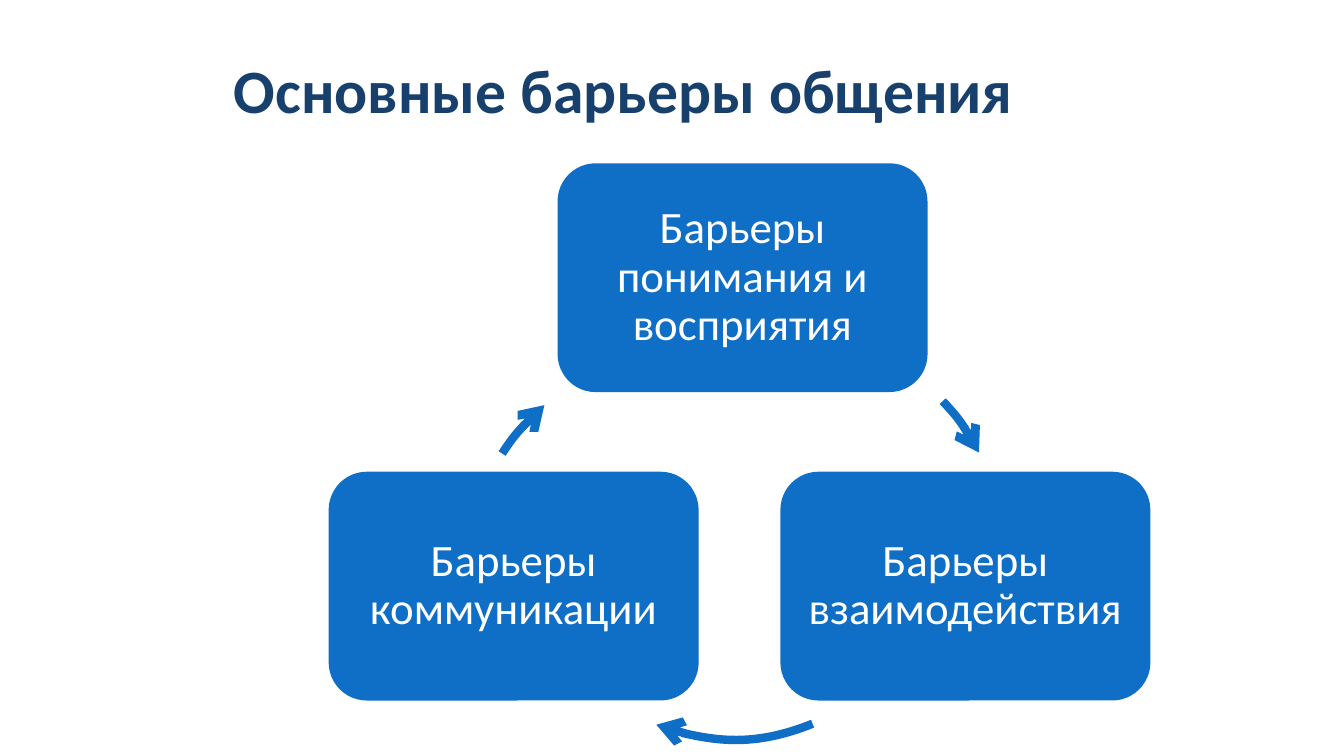
"""Build a slide with a cycle of three communication barriers."""
from dataclasses import dataclass

from lxml.etree import SubElement
from pptx import Presentation
from pptx.dml.color import RGBColor
from pptx.enum.shapes import MSO_SHAPE as Shape
from pptx.enum.text import MSO_ANCHOR as Anchor, PP_ALIGN as Align
from pptx.oxml.ns import qn
from pptx.util import Inches, Pt


@dataclass(frozen=True)
class Theme:
    font: str = "Calibri"
    title_color: RGBColor = RGBColor(0x17, 0x40, 0x6D)
    accent: RGBColor = RGBColor(0x0F, 0x6F, 0xC6)
    white: RGBColor = RGBColor(0xFF, 0xFF, 0xFF)
    title_size: Pt = Pt(44)
    card_size: Pt = Pt(32)
    arrow_width: Pt = Pt(6)


theme = Theme()


def write(box, text, align, margin, size, color, bold):
    """Fill a shape with one formatted paragraph."""
    frame = box.text_frame
    frame_format = {"word_wrap": True, "vertical_anchor": Anchor.MIDDLE}
    for side in ("left", "right", "top", "bottom"):
        frame_format[f"margin_{side}"] = margin
    for name, value in frame_format.items():
        setattr(frame, name, value)
    para = frame.paragraphs[0]
    para.alignment = align
    para.line_spacing = 0.9
    span = para.add_run()
    span.text = text
    for name, value in {"name": theme.font, "size": size, "bold": bold}.items():
        setattr(span.font, name, value)
    span.font.color.rgb = color


deck = Presentation()
deck.slide_width, deck.slide_height = Inches(13.33), Inches(7.5)
page = deck.slides.add_slide(deck.slide_layouts[6])

title = page.shapes.add_textbox(Inches(2.22), Inches(0.2), Inches(10.75), Inches(1.45))
write(title, "Основные барьеры общения", Align.LEFT, Inches(0.1),
      theme.title_size, theme.title_color, True)

circle_size = 4.1
cycle = [
    ("Барьеры понимания и восприятия", (5.53, 1.62), (5.82, 3.35),
     [(9.35, 3.98), (9.49, 4.13), (9.62, 4.3), (9.71, 4.49)]),
    ("Барьеры взаимодействия", (7.74, 4.68), (5.23, 3.24),
     [(8.06, 7.18), (7.56, 7.38), (7.01, 7.38), (6.51, 7.19)]),
    ("Барьеры коммуникации", (3.26, 4.68), (4.68, 3.53),
     [(4.98, 4.5), (5.1, 4.32), (5.24, 4.16), (5.4, 4.02)]),
]
for text, (card_left, card_top), (left, top), curve in cycle:
    card = page.shapes.add_shape(Shape.ROUNDED_RECTANGLE, Inches(card_left),
                                 Inches(card_top), Inches(3.67), Inches(2.27))
    card.shadow.inherit = False
    card.fill.solid()
    card.fill.fore_color.rgb = theme.accent
    card.line.fill.background()
    write(card, text, Align.CENTER, Inches(0.02), theme.card_size, theme.white, False)

    builder = page.shapes.build_freeform(Inches(left), Inches(top))
    corner = (Inches(left + circle_size), Inches(top + circle_size))
    builder.add_line_segments([corner], close=False)
    arrow = builder.convert_to_shape()
    arrow.shadow.inherit = False
    arrow.fill.background()
    arrow.line.color.rgb = theme.accent
    arrow.line.width = theme.arrow_width
    properties = arrow.element.spPr
    SubElement(properties.get_or_add_ln(), qn("a:tailEnd"), type="arrow")

    outline = next(properties.iter(qn("a:path")))
    for segment in list(outline):
        outline.remove(segment)
    for command, points in (("a:moveTo", curve[:1]), ("a:cubicBezTo", curve[1:])):
        segment = SubElement(outline, qn(command))
        for x, y in points:
            SubElement(segment, qn("a:pt"), x=str(Inches(x - left)), y=str(Inches(y - top)))

deck.save("out.pptx")
